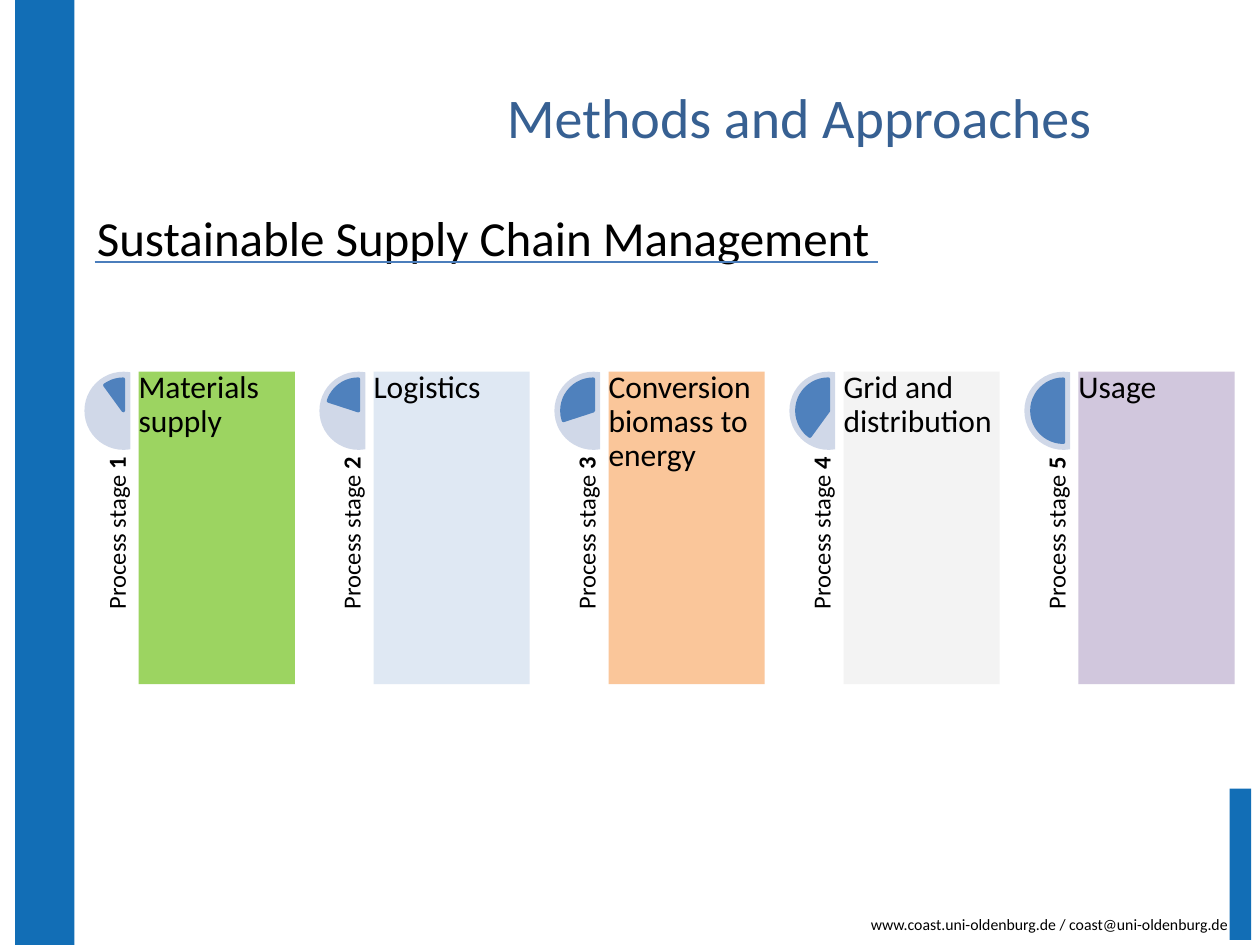
from lxml import etree
from pptx import Presentation
from pptx.dml.color import RGBColor
from pptx.enum import shapes, text
from pptx.oxml.ns import qn
from pptx.util import Inches, Pt

FONT = "Calibri"
BLACK, BRAND_BLUE = "000000", "126EB6"
SHAPE = shapes.MSO_SHAPE
ALIGN = text.PP_ALIGN
ANCHOR = text.MSO_ANCHOR


def color(hex_value):
    return RGBColor.from_string(hex_value)


class SlideBuilder:
    """Holds the text style and the slide being built."""

    def __init__(self, slide, font=FONT):
        self.slide = slide
        self.font = font

    def set_text(self, frame, content, size, font_color=BLACK,
                 align=ALIGN.LEFT, anchor=ANCHOR.TOP, spacing=None,
                 inset=None):
        frame.text = content
        frame.word_wrap = True
        frame.vertical_anchor = anchor
        if inset is not None:
            frame.margin_left = frame.margin_right = Inches(inset)
            frame.margin_top = frame.margin_bottom = Inches(inset)
        paragraph = frame.paragraphs[0]
        paragraph.alignment = align
        if spacing:
            paragraph.line_spacing = spacing
        for run in paragraph.runs:
            self.style_run(run, size, font_color)

    def style_run(self, run, size, font_color=BLACK, bold=None):
        run.font.name = self.font
        run.font.size = Pt(size)
        run.font.bold = bold
        run.font.color.rgb = color(font_color)

    def title(self, content, box, size, font_color):
        title = self.slide.shapes.title
        title.left, title.top, title.width, title.height = map(Inches, box)
        self.set_text(title.text_frame, content, size, font_color,
                      ALIGN.CENTER, ANCHOR.MIDDLE)

    def textbox(self, content, box, size, **options):
        textbox = self.slide.shapes.add_textbox(*map(Inches, box))
        self.set_text(textbox.text_frame, content, size, **options)
        return textbox

    def shape(self, kind, box, fill, adjustments=(), line=None, opacity=None):
        shape = self.slide.shapes.add_shape(kind, *map(Inches, box))
        shape.shadow.inherit = False
        for index, value in enumerate(adjustments):
            shape.adjustments[index] = value
        shape.fill.solid()
        shape.fill.fore_color.rgb = color(fill)
        if opacity is not None:
            fill_color = shape._element.spPr.find(".//" + qn("a:srgbClr"))
            alpha = etree.SubElement(fill_color, qn("a:alpha"))
            alpha.set("val", str(opacity * 1000))
        if line:
            shape.line.color.rgb = color(line)
            shape.line.width = Pt(2)
        else:
            shape.line.fill.background()
        return shape

    def line(self, start, end, line_color, width):
        connector = self.slide.shapes.add_connector(
            shapes.MSO_CONNECTOR.STRAIGHT, *map(Inches, start + end))
        connector.line.color.rgb = color(line_color)
        connector.line.width = Pt(width)
        etree.SubElement(connector._element.spPr, qn("a:effectLst"))

    def stage(self, number, left, top, name, panel_color):
        # Half dial that fills up stage by stage
        self.shape(SHAPE.CHORD, (left, top, 0.62, 0.62), "D0D8E8", (48, 168))
        self.shape(SHAPE.PIE, (left + 0.06, top + 0.06, 0.5, 0.5), "4F81BD",
                   (162 - 21.6 * number, 162), line="4F81BD")

        # Upright stage label
        label = self.textbox("Process stage ",
                             (left - 0.71, top + 1.39, 1.79, 0.37), 14,
                             align=ALIGN.RIGHT, anchor=ANCHOR.BOTTOM,
                             spacing=0.9, inset=0)
        label.rotation = 270
        digit = label.text_frame.paragraphs[0].add_run()
        digit.text = str(number)
        self.style_run(digit, 14, bold=True)

        # Coloured panel with the stage name
        panel = self.shape(SHAPE.RECTANGLE, (left + 0.43, top, 1.24, 2.48),
                           panel_color, opacity=90)
        self.set_text(panel.text_frame, name, 18, spacing=0.9, inset=0)


def main():
    presentation = Presentation()
    presentation.slide_width = Inches(10)
    presentation.slide_height = Inches(7.5)
    title_only = presentation.slide_layouts[5]
    builder = SlideBuilder(presentation.slides.add_slide(title_only))

    # Frame bars and contact line
    builder.shape(SHAPE.RECTANGLE, (0.12, 0, 0.47, 7.5), BRAND_BLUE)
    builder.textbox("www.coast.uni-oldenburg.de / coast@uni-oldenburg.de",
                    (4.41, 7.21, 5.43, 0.25), 9, align=ALIGN.RIGHT)
    builder.shape(SHAPE.RECTANGLE, (9.76, 6.26, 0.17, 1.2), BRAND_BLUE)

    # Process stages
    stages = [
        ("Materials supply", "92D050"),
        ("Logistics", "DCE6F2"),
        ("Conversion biomass to energy", "FAC090"),
        ("Grid and distribution", "F2F2F2"),
        ("Usage", "CCC1DA"),
    ]
    first_left, last_left, top = 0.67, 8.13, 2.95
    pitch = (last_left - first_left) / (len(stages) - 1)
    for index, (name, panel_color) in enumerate(stages):
        builder.stage(index + 1, first_left + index * pitch, top,
                      name, panel_color)

    # Headings
    builder.title("Methods and Approaches", (3.19, 0.3, 6.31, 1.25), 32,
                  "376092")
    builder.textbox("Sustainable Supply Chain Management",
                    (0.67, 1.6, 8.03, 0.57), 28)
    builder.line((0.75, 2.08), (6.97, 2.08), "4B7EBC", 1.5)

    presentation.save("out.pptx")


if __name__ == "__main__":
    main()
